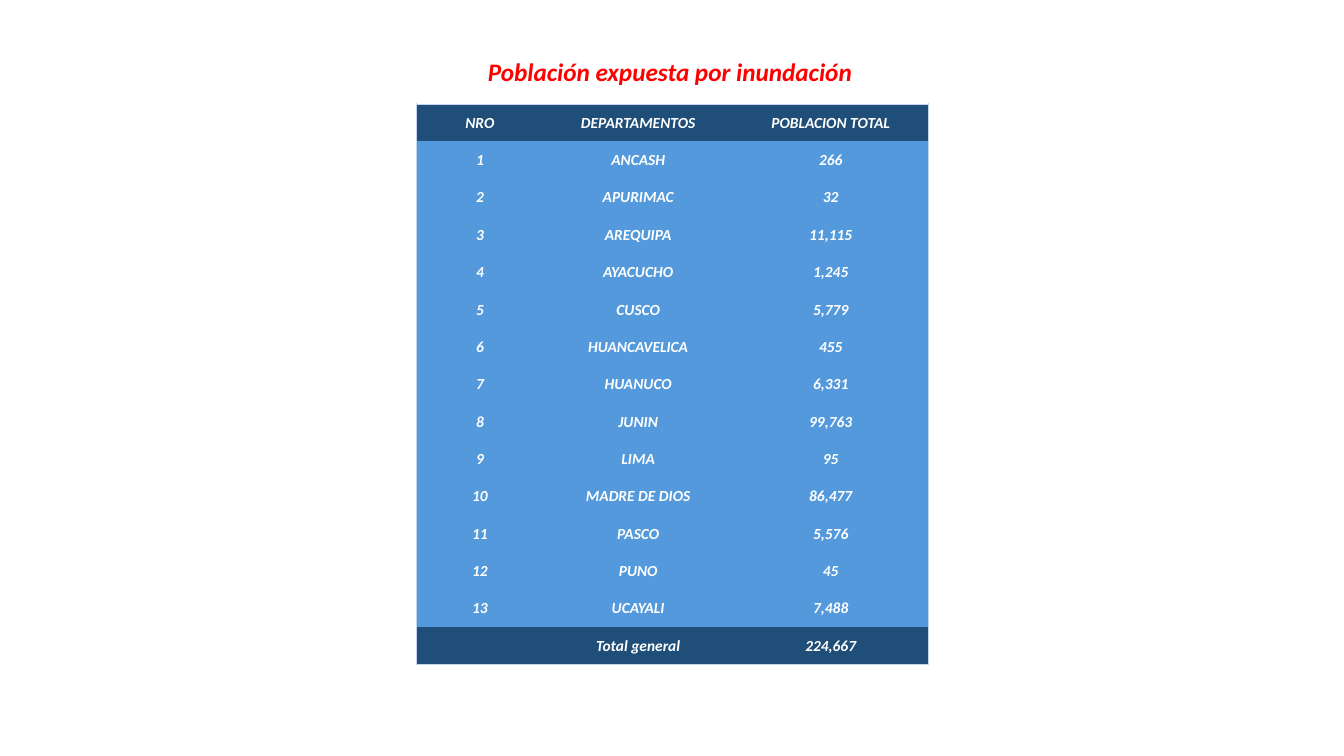
from lxml import etree
from pptx import Presentation
from pptx.dml.color import RGBColor
from pptx.enum.text import MSO_ANCHOR, MSO_AUTO_SIZE, PP_ALIGN
from pptx.oxml.ns import qn
from pptx.util import Inches, Pt

CENTER = PP_ALIGN.CENTER
MIDDLE = MSO_ANCHOR.MIDDLE
NO_FIT = MSO_AUTO_SIZE.NONE

# Content
TITLE = "Población expuesta por inundación"
HEADER = ("NRO", "DEPARTAMENTOS", "POBLACION TOTAL")
DEPARTMENTS = [
    ("ANCASH", "266"),
    ("APURIMAC", "32"),
    ("AREQUIPA", "11,115"),
    ("AYACUCHO", "1,245"),
    ("CUSCO", "5,779"),
    ("HUANCAVELICA", "455"),
    ("HUANUCO", "6,331"),
    ("JUNIN", "99,763"),
    ("LIMA", "95"),
    ("MADRE DE DIOS", "86,477"),
    ("PASCO", "5,576"),
    ("PUNO", "45"),
    ("UCAYALI", "7,488"),
]
TOTAL = ("", "Total general", "224,667")

# Format
COLORS = {"title": "FF0000", "text": "FFFFFF", "dark": "1F4E79",
          "body": "5399DB", "border": "C4D5EB"}
FONT = {"name": "Calibri", "bold": True, "italic": True}
MARGINS = {"margin_left": 0.01, "margin_right": 0.01,
           "margin_top": 0.01, "margin_bottom": 0}
BORDER_WIDTH = Pt(0.5)

# Layout in inches
SLIDE_W, SLIDE_H = 13.33, 7.5
TITLE_BOX = {"left": 4.72, "top": 0.51, "width": 3.85, "height": 0.4}
TABLE_LEFT, TABLE_TOP, TABLE_H = 4.13, 1.03, 5.56
COL_WIDTHS = (1.26, 1.88, 1.94)


def write(tf, text, size, color):
    p = tf.paragraphs[0]
    p.alignment = CENTER
    p.font.size = Pt(size)
    if text:
        r = p.add_run()
        r.text = text
        for name, value in FONT.items():
            setattr(r.font, name, value)
        r.font.size = Pt(size)
        r.font.color.rgb = RGBColor.from_string(COLORS[color])


def set_borders(cell, edges):
    """Draw the outer edges of the table and clear the inner ones."""
    tc_pr = cell._tc.get_or_add_tcPr()
    for side, is_outer in edges.items():
        ln = etree.SubElement(tc_pr, qn(f"a:ln{side}"), w=str(BORDER_WIDTH))
        if is_outer:
            fill = etree.SubElement(ln, qn("a:solidFill"))
            etree.SubElement(fill, qn("a:srgbClr"), val=COLORS["border"])
        else:
            etree.SubElement(ln, qn("a:noFill"))


prs = Presentation()
prs.slide_width, prs.slide_height = Inches(SLIDE_W), Inches(SLIDE_H)
slide = prs.slides.add_slide(prs.slide_layouts[5])

# Title
title = slide.shapes.title
for name, value in TITLE_BOX.items():
    setattr(title, name, Inches(value))
tf = title.text_frame
tf.word_wrap = False
tf.auto_size = NO_FIT
tf.vertical_anchor = MIDDLE
write(tf, TITLE, 18, "title")

# Table
rows = [HEADER]
rows += [(str(n), *row) for n, row in enumerate(DEPARTMENTS, 1)]
rows.append(TOTAL)
last_row, last_col = len(rows) - 1, len(HEADER) - 1

table = slide.shapes.add_table(
    len(rows), len(HEADER), Inches(TABLE_LEFT), Inches(TABLE_TOP),
    Inches(sum(COL_WIDTHS)), Inches(TABLE_H)).table
table.horz_banding = False
table.last_row = True
for column, width in zip(table.columns, COL_WIDTHS):
    column.width = Inches(width)

for i, row in enumerate(rows):
    for j, text in enumerate(row):
        cell = table.cell(i, j)
        for name, value in MARGINS.items():
            setattr(cell, name, Inches(value))
        cell.vertical_anchor = MIDDLE
        write(cell.text_frame, text, 11, "text")
        set_borders(cell, {"L": j == 0, "R": j == last_col,
                           "T": i == 0, "B": i == last_row})
        shade = "dark" if i in (0, last_row) else "body"
        cell.fill.solid()
        cell.fill.fore_color.rgb = RGBColor.from_string(COLORS[shade])

prs.save("out.pptx")
